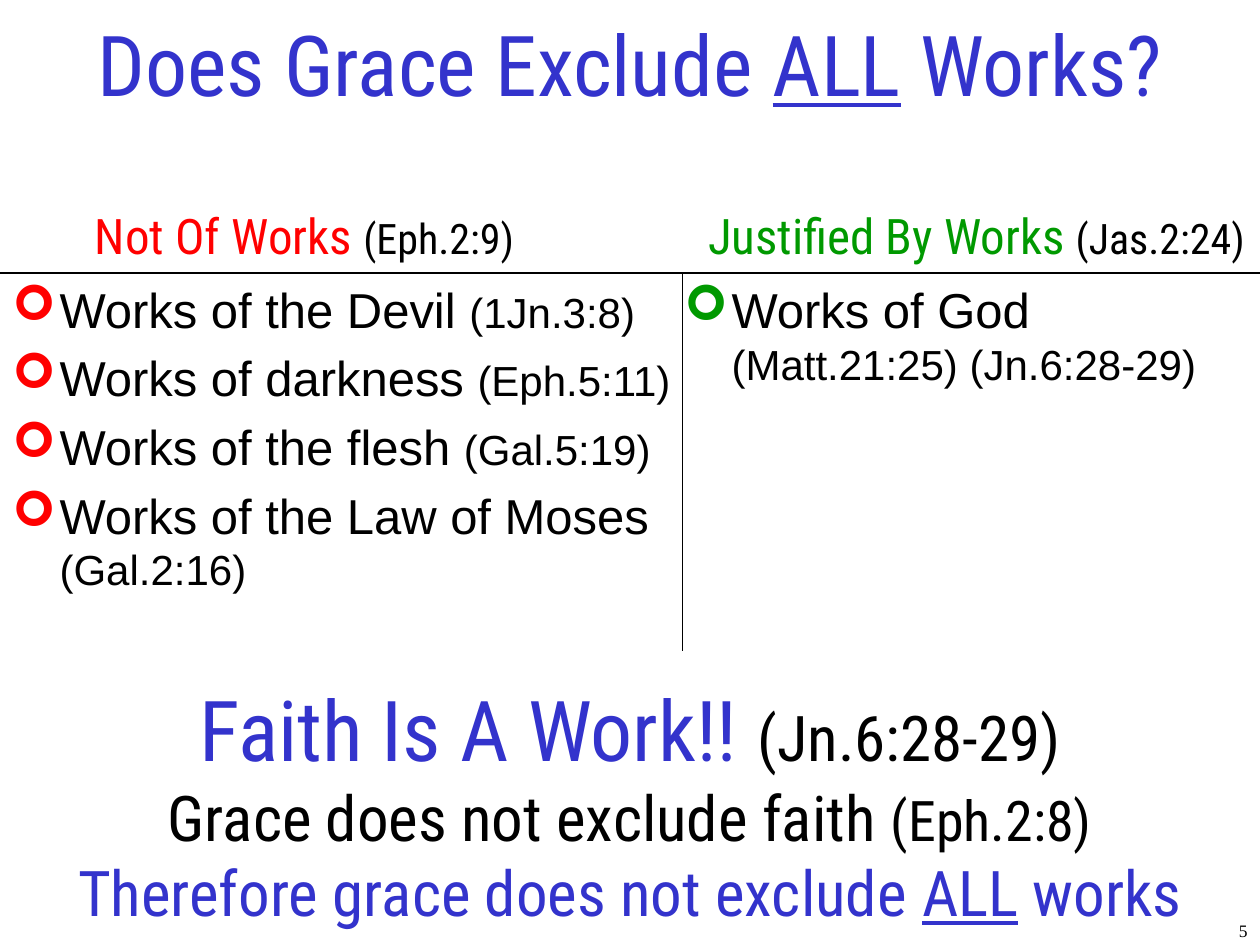
import pptx
import pptx.util
import pptx.dml.color
import pptx.enum.shapes
import pptx.enum.text
import pptx.oxml.ns
from lxml import etree

RGBColor = pptx.dml.color.RGBColor
Align = pptx.enum.text.PP_ALIGN
Anchor = pptx.enum.text.MSO_ANCHOR

BLACK = RGBColor(0x00, 0x00, 0x00)
BLUE = RGBColor(0x33, 0x33, 0xCC)
RED = RGBColor(0xFF, 0x00, 0x00)
GREEN = RGBColor(0x00, 0x99, 0x00)

DISPLAY = "Roboto Condensed"
BODY = "Arial"
SERIF = "Times New Roman"

EMU_PER_PX = 7620
WIDTH, HEIGHT = 1200, 900
RULE_TOP = 260
DIVIDER_LEFT = 650
HEADING_TOP, HEADING_HEIGHT = 190, 68
LIST_HEIGHT = 390
BULLET_INDENT = 45


def px(length):
    return pptx.util.Emu(length * EMU_PER_PX)


def add_node(parent, tag, **attributes):
    return etree.SubElement(parent, pptx.oxml.ns.qn(tag), attributes)


def add_box(page, left, top, width, height, anchor=Anchor.TOP, grow=False):
    box = page.shapes.add_textbox(px(left), px(top), px(width), px(height))
    frame = box.text_frame
    frame.word_wrap = True
    frame.vertical_anchor = anchor
    if grow:
        frame.auto_size = pptx.enum.text.MSO_AUTO_SIZE.SHAPE_TO_FIT_TEXT
    return frame


def add_span(para, text, font=DISPLAY, size=28, color=BLACK, underline=False):
    span = para.add_run()
    span.text = text
    span.font.name = font
    span.font.size = pptx.util.Pt(size)
    span.font.color.rgb = color
    span.font.underline = underline


def set_space_before(para, percent):
    space = add_node(para._p.get_or_add_pPr(), "a:spcBef")
    add_node(space, "a:spcPct", val=str(percent * 1000))


def set_bullet(para, color):
    properties = para._p.get_or_add_pPr()
    properties.set("marL", str(px(BULLET_INDENT)))
    properties.set("indent", str(-px(BULLET_INDENT)))
    bullet_color = add_node(properties, "a:buClr")
    add_node(bullet_color, "a:srgbClr", val=str(color))
    add_node(properties, "a:buFont", typeface="Wingdings")
    add_node(properties, "a:buChar", char="➢")


def add_heading(page, left, width, title, verse, color):
    frame = add_box(page, left, HEADING_TOP, width, HEADING_HEIGHT, grow=True)
    para = frame.paragraphs[0]
    para.alignment = Align.CENTER
    set_space_before(para, 50)
    add_span(para, title, color=color)
    add_span(para, verse, size=24)


def add_list(page, left, width, items, color):
    frame = add_box(page, left, RULE_TOP, width, LIST_HEIGHT)
    for index, (work, verse) in enumerate(items):
        para = frame.add_paragraph() if index else frame.paragraphs[0]
        set_space_before(para, 20)
        set_bullet(para, color)
        add_span(para, work, font=BODY)
        add_span(para, verse, font=BODY, size=24)


def add_rule(page, start, end):
    rule = page.shapes.add_connector(
        pptx.enum.shapes.MSO_CONNECTOR.STRAIGHT, *map(px, start + end))
    rule.line.color.rgb = BLACK
    rule.line.width = pptx.util.Pt(0.75)
    add_node(rule._element.spPr, "a:effectLst")


def add_title(page):
    para = add_box(page, 0, 0, WIDTH, 120, anchor=Anchor.MIDDLE).paragraphs[0]
    para.alignment = Align.CENTER
    add_span(para, "Does Grace Exclude ", size=48, color=BLUE)
    add_span(para, "ALL", size=48, color=BLUE, underline=True)
    add_span(para, " Works?", size=48, color=BLUE)


def add_conclusion(page):
    para = add_box(page, 0, 630, WIDTH, 270, anchor=Anchor.MIDDLE).paragraphs[0]
    para.alignment = Align.CENTER
    add_span(para, "Faith Is A Work!! ", size=48, color=BLUE)
    add_span(para, "(Jn.6:28-29)", size=36)
    para.add_line_break()
    add_span(para, "Grace does not exclude faith ", size=36)
    add_span(para, "(Eph.2:8)", size=32)
    para.add_line_break()
    add_span(para, "Therefore grace does not exclude ", size=36, color=BLUE)
    add_span(para, "ALL", size=36, color=BLUE, underline=True)
    add_span(para, " works", size=36, color=BLUE)


def add_page_number(page):
    para = add_box(page, 950, 870, 250, 30).paragraphs[0]
    para.alignment = Align.RIGHT
    add_span(para, "5", font=SERIF, size=10)


def main():
    deck = pptx.Presentation()
    deck.slide_width, deck.slide_height = px(WIDTH), px(HEIGHT)
    page = deck.slides.add_slide(deck.slide_layouts[6])

    add_page_number(page)
    add_list(page, 0, 670, [
        ("Works of the Devil ", "(1Jn.3:8)"),
        ("Works of darkness ", "(Eph.5:11)"),
        ("Works of the flesh ", "(Gal.5:19)"),
        ("Works of the Law of Moses ", "(Gal.2:16)"),
    ], RED)
    add_title(page)
    add_heading(page, 30, 520, "Not Of Works ", "(Eph.2:9)", RED)
    add_list(page, 640, 530, [
        ("Works of God ", "(Matt.21:25) (Jn.6:28-29)"),
    ], GREEN)
    add_rule(page, (DIVIDER_LEFT, 620), (DIVIDER_LEFT, RULE_TOP))
    add_rule(page, (0, RULE_TOP), (WIDTH, RULE_TOP))
    add_heading(page, 660, 540, "Justified By Works ", "(Jas.2:24)", GREEN)
    add_conclusion(page)

    deck.save("out.pptx")


if __name__ == "__main__":
    main()
